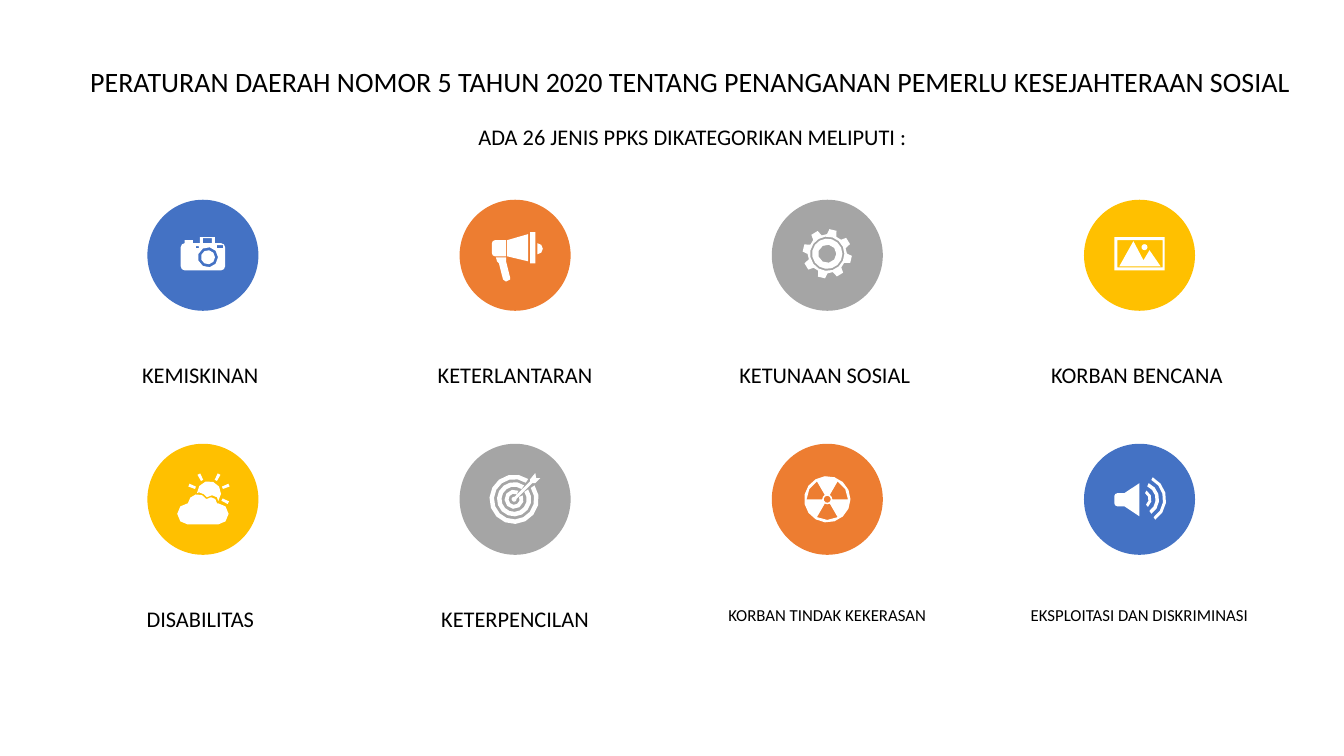
from math import cos, radians, sin

from pptx import Presentation
from pptx.dml.color import RGBColor
from pptx.enum.shapes import MSO_SHAPE as Shape
from pptx.enum.text import MSO_ANCHOR as Anchor, MSO_AUTO_SIZE as AutoSize, PP_ALIGN as Align
from pptx.util import Pt

BLUE = RGBColor(0x44, 0x72, 0xC4)
ORANGE = RGBColor(0xED, 0x7D, 0x31)
GRAY = RGBColor(0xA5, 0xA5, 0xA5)
GOLD = RGBColor(0xFF, 0xC0, 0x00)
WHITE = RGBColor(0xFF, 0xFF, 0xFF)
BLACK = RGBColor(0x00, 0x00, 0x00)

ICON_UNIT = 0.72
COLUMN_PITCH, ROW_PITCH = 223, 174.3
DISC_LEFT, DISC_TOP, DISC_SIZE = 105.3, 142.7, 79.3
LABEL_LEFT, LABEL_TOP, LABEL_WIDTH = 58.9, 254.2, 172


def polar(x, y, radius, angle):
    return x + radius * cos(radians(angle)), y + radius * sin(radians(angle))


def arc(x, y, radius, start, end):
    step = 24 if radius > 12 else 40
    count = max(2, round(abs(end - start) / step))
    return [polar(x, y, radius, start + (end - start) * i / count) for i in range(count + 1)]


def circle(x, y, radius):
    return arc(x, y, radius, 0, 360)[:-1]


def sector(x, y, outer, inner, start, end):
    return arc(x, y, outer, start, end) + arc(x, y, inner, end, start)


def box(left, top, right, bottom):
    return [(left, top), (right, top), (right, bottom), (left, bottom)]


def camera():
    body = (
        arc(-18, -8, 4, 180, 270)
        + [(-18, -15), (-10, -15), (-10, -12), (-3, -12), (-3, -18), (12, -18), (12, -12)]
        + arc(18, -8, 4, 270, 360)
        + arc(18, 11, 4, 0, 90)
        + arc(-18, 11, 4, 90, 180)
    )
    return [body, box(0, -17, 9, -12), box(14, -10, 20, -7), box(-7, -9, -4, -7),
            circle(5, 2, 10), circle(5, 2, 7)]


def megaphone():
    handle = [(-9, 2), (-9, 6), (-5, 22), (-5, 24), (-9, 26), (-12, 24), (-16, 8), (-18, 6), (-19, 2)]
    grip = [(-9, -15), (-9, 1)] + arc(-20, -2, 3, 90, 180) + arc(-20, -12, 3, 180, 270)
    cone = [(13, -21), (13, 6), (-8, 1), (-8, -15)]
    return [handle, grip, cone, box(15, -23, 20, 8), arc(22, -6.5, 5.5, -90, 90)]


def gear():
    profile = [(-14, 19.5), (-8.5, 24.5), (8.5, 24.5), (15, 19)]
    teeth = [polar(0, -1.5, radius, 45 * tooth - 76.5 + offset)
             for tooth in range(8) for offset, radius in profile]
    return [teeth] + [circle(0, -1.5, radius) for radius in (17, 15, 9)]


def landscape():
    hills = [(-6, -14), (4, 5), (10, -5), (21, 11), (-20, 11)]
    return [box(-25, -18, 25, 15), box(-22, -15, 23, 12), hills, circle(5, -8, 3)]


def cloudy_sun():
    cloud = (
        arc(-15, 14.5, 10.5, 90, 270)
        + arc(-5, 5, 10, 185, 330)
        + arc(8, 4, 6, 225, 360)
        + arc(15, 14.5, 10.5, 270, 450)
    )
    sun = arc(6, -6, 12, 180, 400) + [(14, -2), (9, -4), (4, -2), (1, -5), (-4, -7)]
    rays = [[polar(6, -6, radius, angle + offset)
             for radius, offset in ((14.5, -5), (21.5, -4), (21.5, 4), (14.5, 5))]
            for angle in (26, -22, -62, -118, -158)]
    return [cloud, sun] + rays


def target():
    rings = [(24.5, 20, -34, 305), (17, 12.5, -35, 306), (9.5, 5.5, -24, 297)]
    arrow = arc(-1, 0, 2.5, -10, 280) + [(15, -18), (15, -20), (20, -26),
                                         (21, -21), (25, -21), (20, -16), (17, -16)]
    return [sector(-1, 0, *ring) for ring in rings] + [arrow]


def radiation():
    blades = [sector(0, 0, 20.5, 5, start, start + 60) for start in (60, 180, 300)]
    return [circle(0, 0, 23), circle(0, 0, 3.5)] + blades


def loudspeaker():
    horn = [(0, -16), (0, 17), (-15, 7)] + arc(-22, 4, 3, 90, 180) + arc(-22, -3, 3, 180, 270) + [(-15, -6)]
    waves = [(10, 7, -60, 50), (17.5, 14, -66, 56), (24.5, 21.5, -63, 56)]
    return [horn] + [sector(2, 0, *wave) for wave in waves]


def paint(shape, color):
    shape.shadow.inherit = False
    shape.fill.solid()
    shape.fill.fore_color.rgb = color
    shape.line.fill.background()


def add_disc(slide, left, top, color):
    disc = slide.shapes.add_shape(Shape.OVAL, Pt(left), Pt(top), Pt(DISC_SIZE), Pt(DISC_SIZE))
    paint(disc, color)


def add_icon(slide, center_x, center_y, contours):
    outlines = [[(Pt(x * ICON_UNIT), Pt(y * ICON_UNIT)) for x, y in contour] for contour in contours]
    builder = slide.shapes.build_freeform(*outlines[0][0])
    for index, outline in enumerate(outlines):
        if index:
            builder.move_to(*outline[0])
        builder.add_line_segments(outline[1:], close=True)
    paint(builder.convert_to_shape(Pt(center_x), Pt(center_y)), WHITE)


def add_text(slide, left, top, width, height, text, size):
    caption = slide.shapes.add_textbox(Pt(left), Pt(top), Pt(width), Pt(height))
    frame = caption.text_frame
    frame.word_wrap = True
    paragraph = frame.paragraphs[0]
    paragraph.alignment = Align.CENTER
    run = paragraph.add_run()
    run.text = text
    run.font.name = "Calibri"
    run.font.size = Pt(size)
    run.font.color.rgb = BLACK
    return frame


def add_heading(slide, left, top, height, text, size):
    frame = add_text(slide, left, top, 911.5, height, text, size)
    frame.vertical_anchor = Anchor.MIDDLE
    frame.paragraphs[0].line_spacing = 0.9
    frame.paragraphs[0].space_before = Pt(10)


def add_category(slide, column, row, label, size, color, contours):
    shift_x, shift_y = column * COLUMN_PITCH, row * ROW_PITCH
    left, top = DISC_LEFT + shift_x, DISC_TOP + shift_y
    add_disc(slide, left, top, color)
    add_icon(slide, left + DISC_SIZE / 2, top + DISC_SIZE / 2, contours)
    frame = add_text(slide, LABEL_LEFT + shift_x, LABEL_TOP + shift_y, LABEL_WIDTH,
                     size * 1.22 + 7.2, label, size)
    frame.auto_size = AutoSize.SHAPE_TO_FIT_TEXT


def main():
    deck = Presentation()
    deck.slide_width, deck.slide_height = Pt(960), Pt(540)
    slide = deck.slides.add_slide(deck.slide_layouts[6])
    add_heading(slide, 37.4, 34.6, 49.7,
                "PERATURAN DAERAH NOMOR 5 TAHUN 2020 TENTANG PENANGANAN PEMERLU KESEJAHTERAAN SOSIAL", 20)
    add_heading(slide, 38.9, 82.8, 32.4, "ADA 26 JENIS PPKS DIKATEGORIKAN MELIPUTI :", 16)
    categories = [
        ("KEMISKINAN ", 16, BLUE, camera()),
        ("KETERLANTARAN", 16, ORANGE, megaphone()),
        ("KETUNAAN SOSIAL ", 16, GRAY, gear()),
        ("KORBAN BENCANA ", 16, GOLD, landscape()),
        ("DISABILITAS ", 16, GOLD, cloudy_sun()),
        ("KETERPENCILAN", 16, GRAY, target()),
        ("KORBAN TINDAK KEKERASAN", 12, ORANGE, radiation()),
        ("EKSPLOITASI DAN DISKRIMINASI", 12, BLUE, loudspeaker()),
    ]
    for index, category in enumerate(categories):
        row, column = divmod(index, 4)
        add_category(slide, column, row, *category)
    deck.save("out.pptx")


if __name__ == "__main__":
    main()
